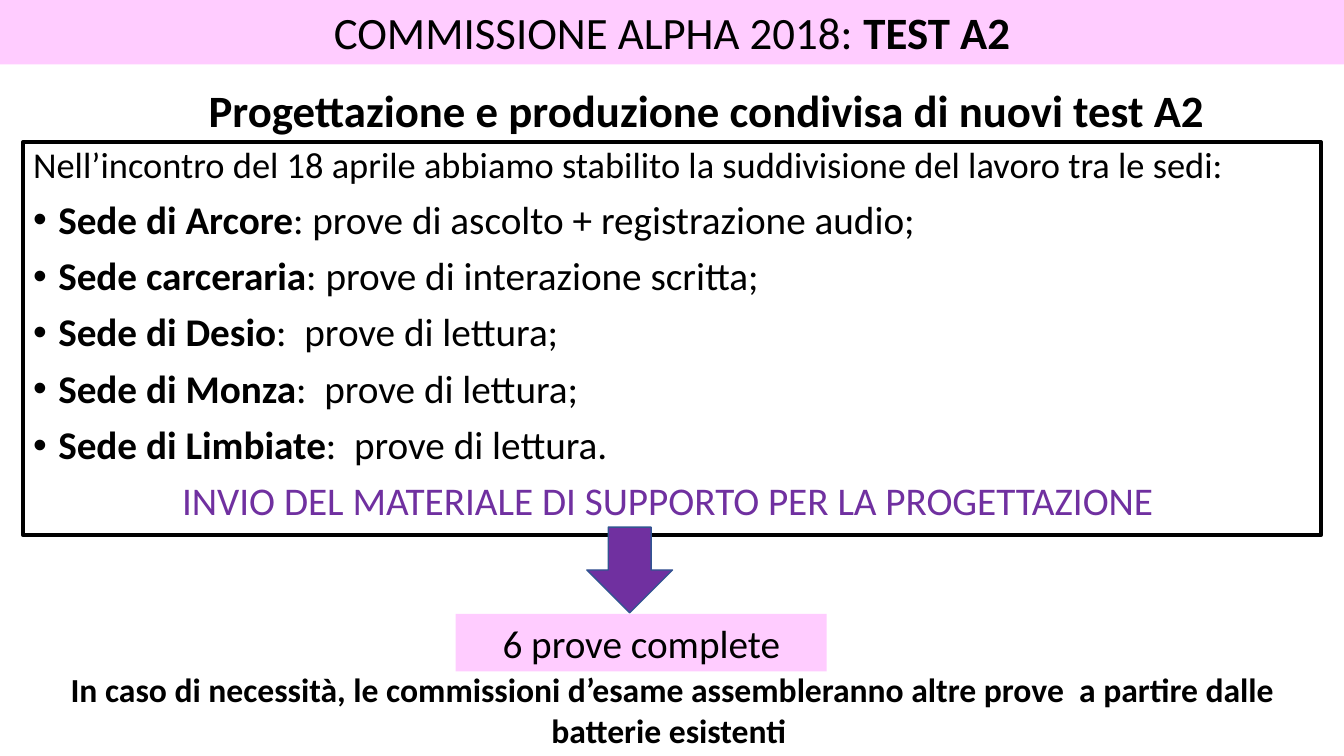
from lxml import etree
from pptx import Presentation
from pptx.dml.color import RGBColor
from pptx.enum.shapes import MSO_SHAPE as SHAPE
from pptx.enum.text import MSO_ANCHOR as ANCHOR, MSO_AUTO_SIZE as AUTOSIZE, PP_ALIGN as ALIGN
from pptx.oxml.ns import qn
from pptx.util import Inches, Pt

BLACK = RGBColor(0x00, 0x00, 0x00)
PINK = RGBColor(0xFF, 0xCC, 0xFF)
PURPLE = RGBColor(0x70, 0x30, 0xA0)
BLUE = RGBColor(0x32, 0x54, 0x91)

TASKS = [
    ("Sede di Arcore", ": prove di ascolto + registrazione audio;"),
    ("Sede carceraria", ": prove di interazione scritta;"),
    ("Sede di Desio", ":  prove di lettura;"),
    ("Sede di Monza", ":  prove di lettura;"),
    ("Sede di Limbiate", ":  prove di lettura."),
]
BODY = {"line_spacing": 0.9, "space_before": Pt(10), "alignment": ALIGN.LEFT}
CENTERED = {"alignment": ALIGN.CENTER}


class SlideBuilder:
    font = "Calibri"

    def __init__(self, prs):
        self.s = prs.slides.add_slide(prs.slide_layouts[5])

    def frame(self, sp, anchor=ANCHOR.TOP):
        tf = sp.text_frame
        for name, value in {"word_wrap": True, "auto_size": AUTOSIZE.NONE,
                            "vertical_anchor": anchor}.items():
            setattr(tf, name, value)
        return tf

    def title(self, box):
        sp = self.s.shapes.title
        sp.left, sp.top, sp.width, sp.height = map(Inches, box)
        sp.fill.solid()
        sp.fill.fore_color.rgb = PINK
        return self.frame(sp)

    def shape(self, kind, box, fill=None, line=None, width=1):
        sp = self.s.shapes.add_shape(kind, *map(Inches, box))
        sp.shadow.inherit = False
        if fill is None:
            sp.fill.background()
        else:
            sp.fill.solid()
            sp.fill.fore_color.rgb = fill
        if line is None:
            sp.line.fill.background()
        else:
            sp.line.color.rgb = line
            sp.line.width = Pt(width)
        return self.frame(sp)

    def text_box(self, box):
        return self.frame(self.s.shapes.add_textbox(*map(Inches, box)))

    def paragraph(self, tf, runs, size, color=BLACK, bullet=False, layout=CENTERED):
        """Write (text, bold) runs as the next paragraph of the frame."""
        p = tf.paragraphs[-1]
        if p.runs:
            p = tf.add_paragraph()
        for name, value in layout.items():
            setattr(p, name, value)
        for text, bold in runs:
            r = p.add_run()
            r.text = text
            r.font.color.rgb = color
            for name, value in {"name": self.font, "size": Pt(size), "bold": bold}.items():
                setattr(r.font, name, value)
        if bullet:
            pPr = p._p.get_or_add_pPr()
            pPr.set("marL", str(Inches(0.25)))
            pPr.set("indent", str(-Inches(0.25)))
            etree.SubElement(pPr, qn("a:buFont")).set("typeface", "Arial")
            etree.SubElement(pPr, qn("a:buChar")).set("char", "•")


def main():
    prs = Presentation()
    prs.slide_width, prs.slide_height = Inches(13.33), Inches(7.5)
    b = SlideBuilder(prs)

    # Title band and heading
    tf = b.title((0, 0, 13.33, 0.64))
    b.paragraph(tf, [("COMMISSIONE ALPHA 2018: ", False), ("TEST A2", True)], 32)
    tf = b.text_box((1.97, 0.77, 10.23, 0.64))
    b.paragraph(tf, [("Progettazione e produzione condivisa di nuovi test A2", True)], 32,
                layout={"alignment": ALIGN.LEFT})

    # Framed division of the work
    tf = b.shape(SHAPE.RECTANGLE, (0.23, 1.41, 12.87, 3.9), line=BLACK, width=3)
    b.paragraph(tf, [("Nell’incontro del 18 aprile abbiamo stabilito la suddivisione "
                      "del lavoro tra le sedi:", False)], 26, layout=BODY)
    for place, task in TASKS:
        b.paragraph(tf, [(place, True), (task, False)], 28, bullet=True, layout=BODY)
    b.paragraph(tf, [("INVIO DEL MATERIALE DI SUPPORTO PER LA PROGETTAZIONE ", False)], 28,
                color=PURPLE, layout=BODY | CENTERED)

    # Arrow to the result
    b.shape(SHAPE.DOWN_ARROW, (5.82, 5.23, 0.85, 0.85), fill=PURPLE, line=BLUE)
    tf = b.shape(SHAPE.RECTANGLE, (4.52, 6.09, 3.68, 0.57), fill=PINK)
    b.paragraph(tf, [("6 prove complete", False)], 28)

    # Closing note
    tf = b.text_box((0.23, 6.59, 12.88, 0.91))
    b.paragraph(tf, [("In caso di necessità, le commissioni d’esame assembleranno altre prove  "
                      "a partire dalle batterie esistenti ", True)], 24)

    prs.save("out.pptx")


if __name__ == "__main__":
    main()
